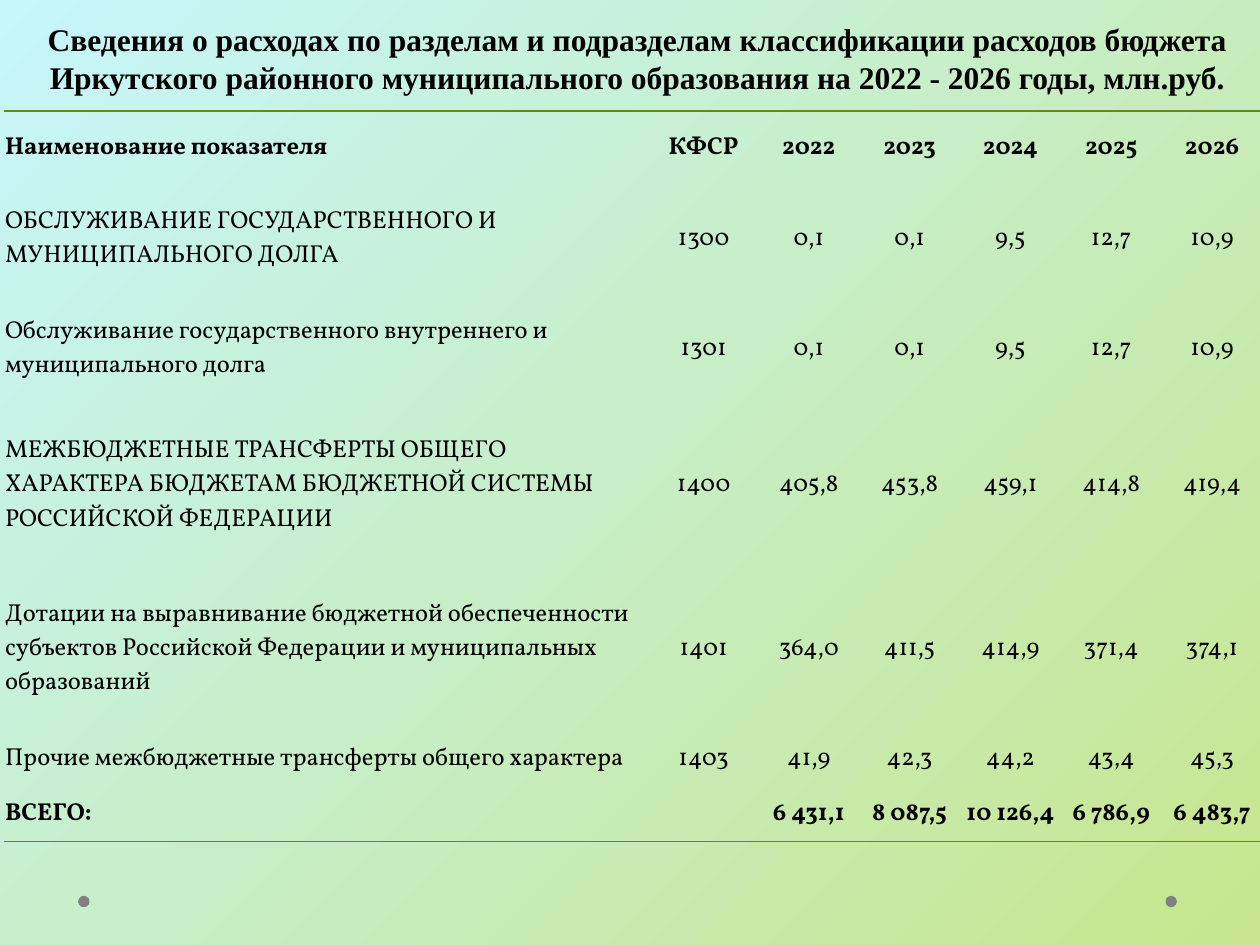
from lxml import etree
from pptx import Presentation
from pptx.dml.color import RGBColor
from pptx.enum import shapes, text
from pptx.oxml.ns import qn
from pptx.util import Inches, Pt

TITLE = ("Сведения о расходах по разделам и подразделам классификации расходов бюджета "
         "Иркутского районного муниципального образования на 2022 - 2026 годы, млн.руб.")
ROWS = [
    ["Наименование показателя", "КФСР", "2022", "2023", "2024", "2025", "2026"],
    ["ОБСЛУЖИВАНИЕ ГОСУДАРСТВЕННОГО И МУНИЦИПАЛЬНОГО ДОЛГА",
     "1300", "0,1", "0,1", "9,5", "12,7", "10,9"],
    ["Обслуживание государственного внутреннего и муниципального долга",
     "1301", "0,1", "0,1", "9,5", "12,7", "10,9"],
    ["МЕЖБЮДЖЕТНЫЕ ТРАНСФЕРТЫ ОБЩЕГО ХАРАКТЕРА БЮДЖЕТАМ БЮДЖЕТНОЙ СИСТЕМЫ "
     "РОССИЙСКОЙ ФЕДЕРАЦИИ",
     "1400", "405,8", "453,8", "459,1", "414,8", "419,4"],
    ["Дотации на выравнивание бюджетной обеспеченности субъектов Российской "
     "Федерации и муниципальных образований",
     "1401", "364,0", "411,5", "414,9", "371,4", "374,1"],
    ["Прочие межбюджетные трансферты общего характера",
     "1403", "41,9", "42,3", "44,2", "43,4", "45,3"],
    ["ВСЕГО:", "", "6 431,1", "8 087,5", "10 126,4", "6 786,9", "6 483,7"],
]
COL_WIDTHS = [5.12, 0.87] + [0.8] * 5
ROW_HEIGHTS = [0.58, 0.87, 0.87, 1.3, 1.3, 0.44, 0.44]
NO_STYLE_NO_GRID = "{2D5ABB26-0587-4C30-8999-92F81FD0307C}"


def rgb(color):
    return RGBColor.from_string(color)


def set_font(p, name, size, bold):
    f = p.font
    f.name, f.size, f.bold = name, Pt(size), bold
    f.color.rgb = rgb("000000")


def set_background(s):
    fill = s.background.fill
    fill.gradient()
    fill.gradient_angle = 315
    for stop, color in zip(fill.gradient_stops, ("C7F6FB", "C7E68F")):
        stop.color.rgb = rgb(color)
    fill.gradient_stops[0].position = 0
    fill.gradient_stops[1].position = 1


def add_dot(s, x):
    sp = s.shapes.add_shape(shapes.MSO_SHAPE.OVAL, Inches(x), Inches(7.11),
                            Inches(0.09), Inches(0.09))
    sp.shadow.inherit = False
    sp.fill.solid()
    sp.fill.fore_color.rgb = rgb("808080")
    sp.line.fill.background()


def set_title(s):
    sp = s.shapes.title
    sp.left, sp.top = Inches(0.12), Inches(0.05)
    sp.width, sp.height = Inches(9.88), Inches(0.76)
    tf = sp.text_frame
    tf.text = TITLE
    tf.word_wrap = True
    tf.vertical_anchor = text.MSO_ANCHOR.BOTTOM
    p = tf.paragraphs[0]
    p.alignment = text.PP_ALIGN.CENTER
    set_font(p, "Times New Roman", 18, True)


def add_border(cell, side):
    """Draw a 1 pt green rule on one side: lnT or lnB."""
    ln = etree.Element(qn(f"a:{side}"), w=str(Pt(1)))
    fill = etree.SubElement(ln, qn("a:solidFill"))
    etree.SubElement(fill, qn("a:srgbClr"), val="63891F")
    cell._tc.get_or_add_tcPr().insert(0, ln)


def fill_cell(cell, value, centered, bold):
    cell.text = value
    cell.fill.background()
    cell.vertical_anchor = text.MSO_ANCHOR.MIDDLE
    cell.margin_left = cell.margin_top = cell.margin_right = Inches(0.01)
    cell.margin_bottom = 0
    p = cell.text_frame.paragraphs[0]
    p.alignment = text.PP_ALIGN.CENTER if centered else text.PP_ALIGN.LEFT
    set_font(p, "Vollkorn", 14, bold)


def add_budget_table(s):
    table = s.shapes.add_table(len(ROWS), len(COL_WIDTHS), Inches(0.03), Inches(0.88),
                               Inches(9.97), Inches(5.81)).table
    table._tbl.tblPr.find(qn("a:tableStyleId")).text = NO_STYLE_NO_GRID
    table.first_row = table.horz_banding = False
    for col, width in zip(table.columns, COL_WIDTHS):
        col.width = Inches(width)
    for row, height in zip(table.rows, ROW_HEIGHTS):
        row.height = Inches(height)
    borders = {0: "lnT", len(ROWS) - 1: "lnB"}
    for i, values in enumerate(ROWS):
        for j, value in enumerate(values):
            cell = table.cell(i, j)
            fill_cell(cell, value, centered=j > 0, bold=i in borders)
            if i in borders:
                add_border(cell, borders[i])


def main():
    prs = Presentation()
    prs.slide_width, prs.slide_height = Inches(10), Inches(7.5)
    s = prs.slides.add_slide(prs.slide_layouts[5])
    set_background(s)
    for x in (9.25, 0.62):
        add_dot(s, x)
    add_budget_table(s)
    set_title(s)
    prs.save("out.pptx")


if __name__ == "__main__":
    main()
